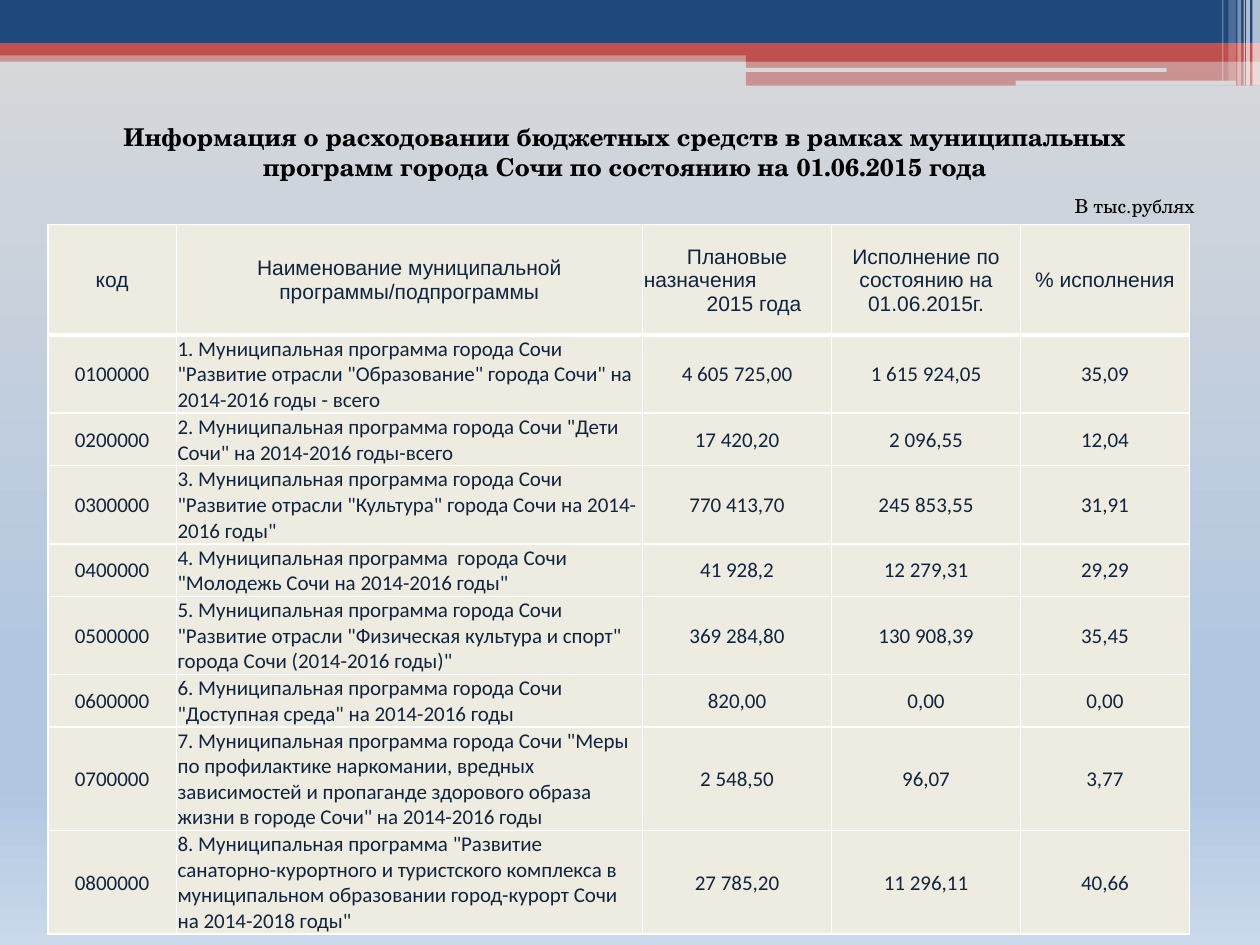
"""Build the slide on municipal programme spending in Sochi."""
from copy import deepcopy

from lxml.etree import SubElement
from pptx import Presentation
from pptx.dml.color import RGBColor
from pptx.enum.shapes import MSO_SHAPE
from pptx.enum.text import MSO_ANCHOR, MSO_AUTO_SIZE, PP_ALIGN
from pptx.oxml.ns import qn
from pptx.util import Inches, Pt

THEME = {
    "navy": "1F497D", "red": "C0504D", "white": "FFFFFF", "grey": "D9D9D9",
    "cell": "EEECE1", "ink": "0F243E", "black": "000000",
    "background": [(0, "D9D9D9"), (0.74, "B0C6E1"), (0.83, "B0C6E1"), (1, "CAD9EB")],
    "title_font": "TeX Gyre Schola", "header_font": "Arial", "body_font": "Calibri",
    "title_size": 14, "unit_size": 11, "table_size": 12,
    "thin_border": 1, "thick_border": 3,
}

TITLE = ("Информация о расходовании бюджетных средств в рамках муниципальных "
         "программ города Сочи по состоянию на 01.06.2015 года")
UNIT = "В тыс.рублях"
HEADERS = ["код", "Наименование муниципальной программы/подпрограммы",
           "Плановые\nназначения\n2015 года",
           "Исполнение по состоянию на 01.06.2015г.", "% исполнения"]
PROGRAMMES = [
    ("0100000", '1. Муниципальная программа города Сочи "Развитие отрасли "Образование" '
     'города Сочи" на 2014-2016 годы - всего', "4 605 725,00", "1 615 924,05", "35,09"),
    ("0200000", '2. Муниципальная программа города Сочи "Дети Сочи" на 2014-2016 годы-всего',
     "17 420,20", "2 096,55", "12,04"),
    ("0300000", '3. Муниципальная программа города Сочи "Развитие отрасли "Культура" '
     'города Сочи на 2014-2016 годы"', "770 413,70", "245 853,55", "31,91"),
    ("0400000", '4. Муниципальная программа  города Сочи "Молодежь Сочи на 2014-2016 годы"',
     "41 928,2", "12 279,31", "29,29"),
    ("0500000", '5. Муниципальная программа города Сочи "Развитие отрасли "Физическая '
     'культура и спорт" города Сочи (2014-2016 годы)"', "369 284,80", "130 908,39", "35,45"),
    ("0600000", '6. Муниципальная программа города Сочи "Доступная среда" на 2014-2016 годы',
     "820,00", "0,00", "0,00"),
    ("0700000", '7. Муниципальная программа города Сочи "Меры по профилактике наркомании, '
     'вредных зависимостей и пропаганде здорового образа жизни в городе Сочи" '
     'на 2014-2016 годы', "2 548,50", "96,07", "3,77"),
    ("0800000", '8. Муниципальная программа "Развитие санаторно-курортного и туристского '
     'комплекса в муниципальном образовании город-курорт Сочи на 2014-2018 годы"',
     "27 785,20", "11 296,11", "40,66"),
]
COLUMN_WIDTHS = [1.02, 3.7, 1.5, 1.5, 1.34]
HEADER_HEIGHT, ROW_HEIGHT = 0.88, 0.41
NAME_COLUMN, PLAN_COLUMN = 1, 2

BANDS = [
    ("RECTANGLE", 0, 0.4, 10, 0.09, "red", 50),
    ("RECTANGLE", 0, 0, 10, 0.34, "navy", 100),
    ("RECTANGLE", 0, 0.34, 10, 0.1, "red", 100),
    ("RECTANGLE", 5.92, 0.39, 4.08, 0.1, "red", 100),
    ("RECTANGLE", 5.92, 0.48, 4.08, 0.2, "red", 50),
    ("ROUNDED_RECTANGLE", 5.91, 0.54, 3.35, 0.03, "grey", 100),
    ("ROUNDED_RECTANGLE", 8.06, 0.64, 1.75, 0.04, "grey", 100),
]
STRIPES = [(9.94, 0.06, 0.68, 65), (9.89, 0.03, 0.68, 65), (9.87, 0.01, 0.68, 60),
           (9.82, 0.03, 0.68, 40), (9.75, 0.06, 0.64, 20), (9.7, 0.01, 0.64, 30)]


def color(name):
    return RGBColor.from_string(THEME[name])


def paint_background(slide):
    fill = slide.background.fill
    fill.gradient()
    fill.gradient_angle = 270
    stop_list = slide._element.find(".//" + qn("a:gsLst"))
    while len(stop_list) < len(THEME["background"]):
        stop_list.append(deepcopy(stop_list[0]))
    for stop, (position, value) in zip(fill.gradient_stops, THEME["background"]):
        stop.position = position
        stop.color.rgb = RGBColor.from_string(value)


def add_band(slide, kind, left, top, width, height, color_name, opacity):
    shape = slide.shapes.add_shape(getattr(MSO_SHAPE, kind), Inches(left), Inches(top),
                                   Inches(width), Inches(height))
    shape.shadow.inherit = False
    shape.line.fill.background()
    shape.fill.solid()
    shape.fill.fore_color.rgb = color(color_name)
    if opacity < 100:
        value = shape._element.spPr.find(".//" + qn("a:srgbClr"))
        SubElement(value, qn("a:alpha")).set("val", str(opacity * 1000))


def format_text(text_frame, font_name, size, color_name, alignment, bold=False):
    for paragraph in text_frame.paragraphs:
        paragraph.alignment = alignment
        for run in paragraph.runs:
            run.font.name = font_name
            run.font.size = Pt(size)
            run.font.bold = bold
            run.font.color.rgb = color(color_name)


def add_text(slide, text, box, size, alignment, bold=False):
    shape = slide.shapes.add_textbox(*map(Inches, box))
    shape.text_frame.word_wrap = True
    shape.text_frame.auto_size = MSO_AUTO_SIZE.SHAPE_TO_FIT_TEXT
    shape.text_frame.text = text
    format_text(shape.text_frame, THEME["title_font"], size, "black", alignment, bold)


def set_borders(cell, thick_side):
    properties = cell._tc.get_or_add_tcPr()
    for side in ("lnL", "lnR", "lnT", "lnB"):
        width = THEME["thick_border" if side == thick_side else "thin_border"]
        line = SubElement(properties, qn("a:" + side), w=str(Pt(width)))
        fill = SubElement(line, qn("a:solidFill"))
        SubElement(fill, qn("a:srgbClr"), val=THEME["white"])


def fill_cell(cell, text, row, column):
    cell.margin_left = cell.margin_right = cell.margin_top = Inches(0.01)
    cell.margin_bottom = 0
    cell.vertical_anchor = MSO_ANCHOR.MIDDLE
    set_borders(cell, {0: "lnB", 1: "lnT"}.get(row))
    cell.fill.solid()
    cell.fill.fore_color.rgb = color("cell")
    cell.text_frame.text = text
    left_aligned = row > 0 and column == NAME_COLUMN
    format_text(cell.text_frame, THEME["body_font" if row else "header_font"],
                THEME["table_size"], "ink", PP_ALIGN.LEFT if left_aligned else PP_ALIGN.CENTER)


def add_programme_table(slide):
    rows = [HEADERS, *PROGRAMMES]
    height = HEADER_HEIGHT + ROW_HEIGHT * len(PROGRAMMES)
    table = slide.shapes.add_table(len(rows), len(HEADERS), Inches(0.38), Inches(1.78),
                                   Inches(sum(COLUMN_WIDTHS)), Inches(height)).table
    table.horz_banding = False
    for column, width in zip(table.columns, COLUMN_WIDTHS):
        column.width = Inches(width)
    for row_index, texts in enumerate(rows):
        table.rows[row_index].height = Inches(ROW_HEIGHT if row_index else HEADER_HEIGHT)
        for column_index, text in enumerate(texts):
            fill_cell(table.cell(row_index, column_index), text, row_index, column_index)
    plan_lines = table.cell(0, PLAN_COLUMN).text_frame.paragraphs
    plan_lines[1].alignment = PP_ALIGN.LEFT
    plan_lines[2]._p.get_or_add_pPr().set("marL", str(Inches(0.27)))


def main():
    presentation = Presentation()
    presentation.slide_width, presentation.slide_height = Inches(10), Inches(7.5)
    slide = presentation.slides.add_slide(presentation.slide_layouts[6])
    paint_background(slide)
    for band in BANDS:
        add_band(slide, *band)
    for left, width, height, opacity in STRIPES:
        add_band(slide, "RECTANGLE", left, 0, width, height, "white", opacity)
    add_programme_table(slide)
    add_text(slide, TITLE, (0.51, 0.92, 8.9, 0.57), THEME["title_size"], PP_ALIGN.CENTER, True)
    add_text(slide, UNIT, (8.43, 1.49, 1.57, 0.29), THEME["unit_size"], PP_ALIGN.LEFT)
    presentation.save("out.pptx")


if __name__ == "__main__":
    main()
